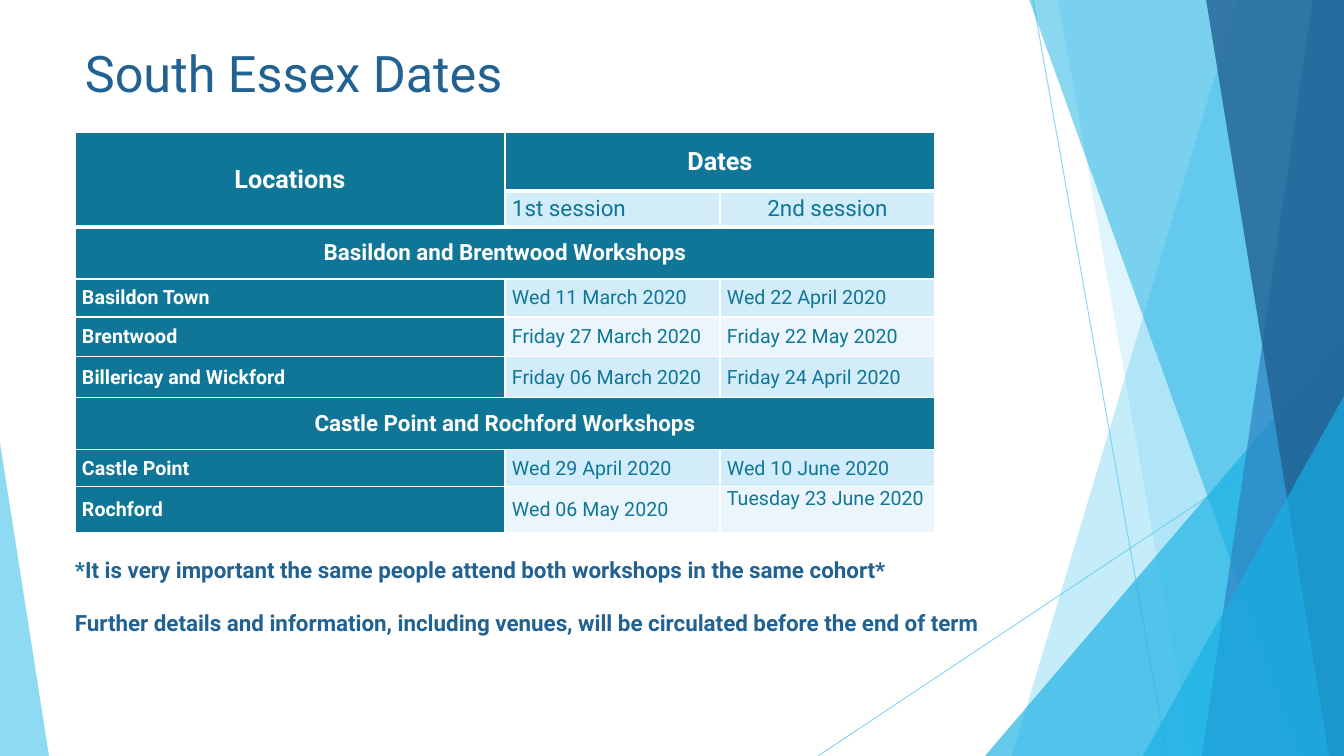
from lxml.etree import SubElement as add_element
from pptx import Presentation
from pptx.dml.color import RGBColor
from pptx.enum.shapes import MSO_CONNECTOR as Connector, MSO_SHAPE as Preset
from pptx.enum.text import MSO_ANCHOR as Anchor, PP_ALIGN as Align
from pptx.oxml.ns import qn
from pptx.util import Pt

EMU_PER_PX = 914400 / 100.8
SKY, CYAN, BLUE, NAVY = "5FCBEF", "17B0E4", "2E83C3", "226292"
TEAL, PALE, PALER, WHITE = "0F7698", "D2ECF9", "EAF6FC", "FFFFFF"


def px(*lengths):
    return [round(length * EMU_PER_PX) for length in lengths]


def color(value):
    return RGBColor.from_string(value)


def assign(target, values):
    for name, value in values.items():
        setattr(target, name, value)


class Deck:
    font = "Roboto"

    def __init__(self, width, height):
        self.presentation = Presentation()
        size = px(width, height)
        assign(self.presentation, {"slide_width": size[0], "slide_height": size[1]})
        self.slide = self.presentation.slides.add_slide(self.presentation.slide_layouts[6])
        self.shapes = self.slide.shapes

    def set_alpha(self, element, percent):
        for node in element.iter(qn("a:srgbClr")):
            add_element(node, qn("a:alpha"), val=str(percent * 1000))

    def paint(self, shape, fill, alpha):
        shape.shadow.inherit = False
        shape.fill.solid()
        shape.fill.fore_color.rgb = color(fill)
        shape.line.fill.background()
        self.set_alpha(shape.element.spPr, alpha)

    def line(self, start, end, stroke, alpha):
        connector = self.shapes.add_connector(Connector.STRAIGHT, *px(*start, *end))
        connector.line.color.rgb = color(stroke)
        connector.line.width = Pt(0.75)
        self.set_alpha(connector.element.spPr, alpha)
        add_element(connector.element.spPr, qn("a:effectLst"))

    def polygon(self, points, fill, alpha):
        builder = self.shapes.build_freeform(*points[0], scale=EMU_PER_PX)
        builder.add_line_segments(points[1:], close=True)
        self.paint(builder.convert_to_shape(), fill, alpha)

    def triangle(self, box, apex, fill, alpha):
        shape = self.shapes.add_shape(Preset.ISOSCELES_TRIANGLE, *px(*box))
        shape.adjustments[0] = apex
        self.paint(shape, fill, alpha)

    def add_runs(self, paragraph, runs, size, bold, align=Align.LEFT):
        paragraph.alignment = align
        for text, fill in runs:
            run = paragraph.add_run()
            run.text = text
            assign(run.font, {"name": self.font, "size": Pt(size), "bold": bold})
            run.font.color.rgb = color(fill)

    def text(self, box, paragraphs, size, bold=False, gap=0):
        frame = self.shapes.add_textbox(*px(*box)).text_frame
        assign(frame, {"word_wrap": True, "vertical_anchor": Anchor.TOP})
        for index, runs in enumerate(paragraphs):
            paragraph = frame.add_paragraph() if index else frame.paragraphs[0]
            paragraph.space_before = Pt(gap if index else 0)
            self.add_runs(paragraph, runs, size, bold)

    def table(self, left, top, widths, heights):
        frame = self.shapes.add_table(
            len(heights), len(widths), *px(left, top, sum(widths), sum(heights)))
        table = frame.table
        assign(table, {"first_row": False, "horz_banding": False})
        for column, width in zip(table.columns, px(*widths)):
            column.width = width
        for row, height in zip(table.rows, px(*heights)):
            row.height = height
        return table

    def cell(self, cell, text, fill, ink, size, bold, align, bottom=1, anchor=Anchor.MIDDLE):
        side = px(7)[0]
        assign(cell, {"margin_left": side, "margin_right": side, "margin_top": 0,
                      "margin_bottom": 0, "vertical_anchor": anchor})
        properties = cell._tc.get_or_add_tcPr()
        for edge, points in {"L": 1, "R": 1, "T": 1, "B": bottom}.items():
            border = add_element(properties, qn(f"a:ln{edge}"), w=str(Pt(points)))
            add_element(add_element(border, qn("a:solidFill")), qn("a:srgbClr"), val=WHITE)
        cell.fill.solid()
        cell.fill.fore_color.rgb = color(fill)
        self.add_runs(cell.text_frame.paragraphs[0], [(text, ink)], size, bold, align)


def draw_backdrop(deck):
    right, bottom = 1344, 756
    deck.line((1033, 0), (1167, bottom), SKY, 70)
    deck.line((right, 406), (818, bottom), SKY, 70)

    def band(top_left, bottom_left, fill, alpha):
        deck.polygon([(top_left, -1), (right, -1), (right, bottom), (bottom_left, bottom)],
                     fill, alpha)

    band(1238, 1012, SKY, 36)
    band(1058, 1192, SKY, 20)
    deck.triangle((985, 336, 359, 420), 1, CYAN, 66)
    band(1029, 1301, CYAN, 50)
    band(1313, 1202, BLUE, 70)
    band(1206, 1329, NAVY, 80)
    deck.triangle((1143, 396, 201, 360), 1, CYAN, 66)
    deck.triangle((0, 443, 49, 313), 0, SKY, 70)


def draw_schedule(deck):
    rows = [
        ("Basildon and Brentwood Workshops",),
        ("Basildon Town", "Wed 11 March 2020", "Wed 22 April 2020"),
        ("Brentwood", "Friday 27 March 2020", "Friday 22 May 2020"),
        ("Billericay and Wickford", "Friday 06 March 2020", "Friday 24 April 2020"),
        ("Castle Point and Rochford Workshops",),
        ("Castle Point", "Wed 29 April 2020", "Wed 10 June 2020"),
        ("Rochford", "Wed 06 May 2020", "Tuesday 23 June 2020"),
    ]
    table = deck.table(75, 132, [430, 215, 215], [59, 36, 52, 38, 40, 41, 52, 37, 46])
    table.cell(0, 0).merge(table.cell(1, 0))
    table.cell(0, 1).merge(table.cell(0, 2))
    for column, heading in enumerate(("Locations", "Dates")):
        deck.cell(table.cell(0, column), heading, TEAL, WHITE, 18, True, Align.CENTER, 3)
    sessions = (("1st session", Align.LEFT), ("2nd session", Align.CENTER))
    for column, (session, align) in enumerate(sessions, 1):
        deck.cell(table.cell(1, column), session, PALE, TEAL, 16, False, align, 3)

    band = 0
    for index, (name, *dates) in enumerate(rows, 2):
        if not dates:
            band = 0
            table.cell(index, 0).merge(table.cell(index, 2))
            deck.cell(table.cell(index, 0), name, TEAL, WHITE, 16, True, Align.CENTER)
            continue
        deck.cell(table.cell(index, 0), name, TEAL, WHITE, 14, True, Align.LEFT)
        for column, date in enumerate(dates, 1):
            anchor = Anchor.TOP if date == rows[-1][-1] else Anchor.MIDDLE
            deck.cell(table.cell(index, column), date, (PALE, PALER)[band % 2], TEAL, 14,
                      False, Align.LEFT, anchor=anchor)
        band += 1


def main():
    deck = Deck(1344, 756)
    draw_backdrop(deck)
    deck.text((75, 37, 948, 85), [[("South Essex Dates", NAVY)]], 36)
    draw_schedule(deck)
    notices = [
        [("*", TEAL),
         ("It is very important the same people attend both workshops in the same cohort*", NAVY)],
        [("Further details and information, including venues, "
          "will be circulated before the end of term", NAVY)],
    ]
    deck.text((65, 551, 1014, 146), notices, 16, bold=True, gap=19)
    deck.presentation.save("out.pptx")


if __name__ == "__main__":
    main()
